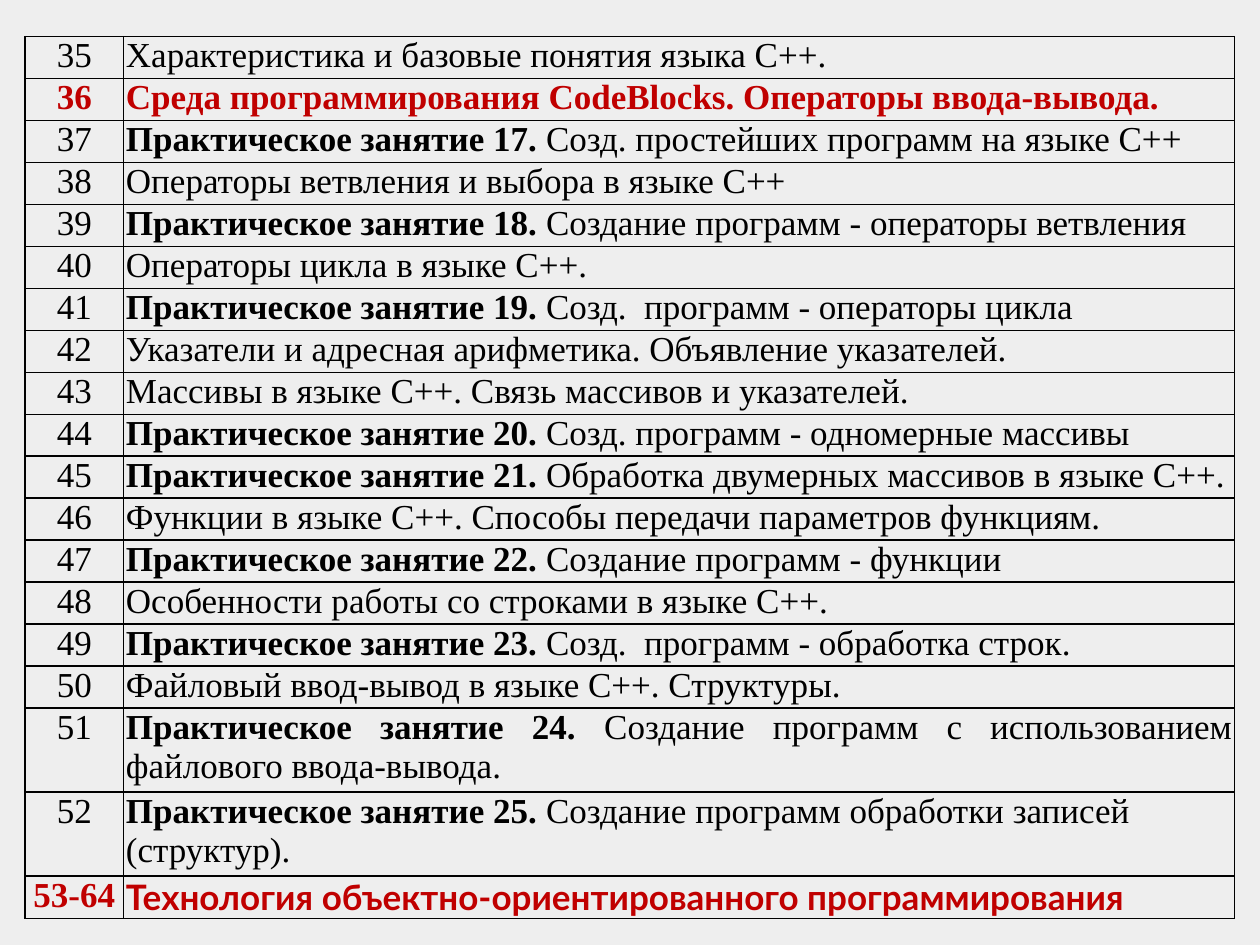
import pptx
import pptx.dml.color
import pptx.enum.text
import pptx.oxml
import pptx.oxml.ns
import pptx.util

Inches = pptx.util.Inches
Align = pptx.enum.text.PP_ALIGN

THEME = {
    "background": "EEEEEE",
    "text": "000000",
    "accent": "C00000",
    "border": "000000",
    "border_width": 1,
    "font": "Times New Roman",
    "accent_font": "Lato",
    "size": 20,
}

# Lesson number, bold lead-in, topic
LESSONS = [
    ("35", "", "Характеристика и базовые понятия языка C++."),
    ("36", "", "Среда программирования CodeBlocks. Операторы ввода-вывода."),
    ("37", "Практическое занятие 17.", "Созд. простейших программ на языке C++"),
    ("38", "", "Операторы ветвления и выбора в языке С++"),
    ("39", "Практическое занятие 18.", "Создание программ - операторы ветвления"),
    ("40", "", "Операторы цикла в языке C++."),
    ("41", "Практическое занятие 19.", "Созд.  программ - операторы цикла"),
    ("42", "", "Указатели и адресная арифметика. Объявление указателей."),
    ("43", "", "Массивы в языке C++. Связь массивов и указателей."),
    ("44", "Практическое занятие 20.", "Созд. программ - одномерные массивы"),
    ("45", "Практическое занятие 21.", "Обработка двумерных массивов в языке C++."),
    ("46", "", "Функции в языке C++. Способы передачи параметров функциям."),
    ("47", "Практическое занятие 22.", "Создание программ - функции"),
    ("48", "", "Особенности работы со строками в языке C++."),
    ("49", "Практическое занятие 23.", "Созд.  программ - обработка строк."),
    ("50", "", "Файловый ввод-вывод в языке C++. Структуры."),
    ("51", "Практическое занятие 24.",
     "Создание программ с использованием файлового ввода-вывода."),
    ("52", "Практическое занятие 25.", "Создание программ обработки записей (структур)."),
    ("53-64", "", "Технология объектно-ориентированного программирования"),
]
HIGHLIGHTED = {"36", "53-64"}
TWO_LINE = {"51", "52"}
JUSTIFIED = {"51"}
TOPIC_FONTS = {"53-64": THEME["accent_font"]}

LEFT, TOP, HEIGHT = 0.2, 0.29, 7
COLUMN_WIDTHS = [0.78, 8.82]


def rgb(value):
    return pptx.dml.color.RGBColor.from_string(value)


def add_borders(cell):
    properties = cell._tc.get_or_add_tcPr()
    width = pptx.util.Pt(THEME["border_width"])
    for position, side in enumerate(("lnL", "lnR", "lnT", "lnB")):
        properties.insert(position, pptx.oxml.parse_xml(
            f'<a:{side} {pptx.oxml.ns.nsdecls("a")} w="{width}"><a:solidFill>'
            f'<a:srgbClr val="{THEME["border"]}"/></a:solidFill></a:{side}>'))


def fill_cell(cell, spans, align, color, font_name):
    """Write (text, bold) spans into a bordered, unfilled cell."""
    cell.margin_left = cell.margin_right = Inches(0.02)
    cell.margin_top = cell.margin_bottom = 0
    cell.fill.background()
    add_borders(cell)
    para = cell.text_frame.paragraphs[0]
    para.alignment = align
    for text, bold in spans:
        span = para.add_run()
        span.text = text
        span.font.bold = bold
        span.font.name = font_name
        span.font.size = pptx.util.Pt(THEME["size"])
        span.font.color.rgb = rgb(color)


def add_lesson_table(slide):
    table = slide.shapes.add_table(
        len(LESSONS), len(COLUMN_WIDTHS), Inches(LEFT), Inches(TOP),
        Inches(sum(COLUMN_WIDTHS)), Inches(HEIGHT)).table
    table.first_row = table.horz_banding = False
    for column, width in zip(table.columns, COLUMN_WIDTHS):
        column.width = Inches(width)

    # Every text line takes an equal share of the table height
    line_height = HEIGHT / (len(LESSONS) + len(TWO_LINE))
    for index, (number, lead, topic) in enumerate(LESSONS):
        table.rows[index].height = Inches(line_height * (2 if number in TWO_LINE else 1))
        strong = number in HIGHLIGHTED
        color = THEME["accent" if strong else "text"]
        spans = [(lead + " ", True)] if lead else []
        spans.append((topic, strong))
        fill_cell(table.cell(index, 0), [(number, strong)], Align.CENTER,
                  color, THEME["font"])
        fill_cell(table.cell(index, 1), spans,
                  Align.JUSTIFY if number in JUSTIFIED else Align.LEFT,
                  color, TOPIC_FONTS.get(number, THEME["font"]))


def main():
    deck = pptx.Presentation()
    deck.slide_width, deck.slide_height = Inches(10), Inches(7.5)
    slide = deck.slides.add_slide(deck.slide_layouts[6])

    # Background
    slide.background.fill.solid()
    slide.background.fill.fore_color.rgb = rgb(THEME["background"])

    # Lesson plan
    add_lesson_table(slide)
    deck.save("out.pptx")


if __name__ == "__main__":
    main()
